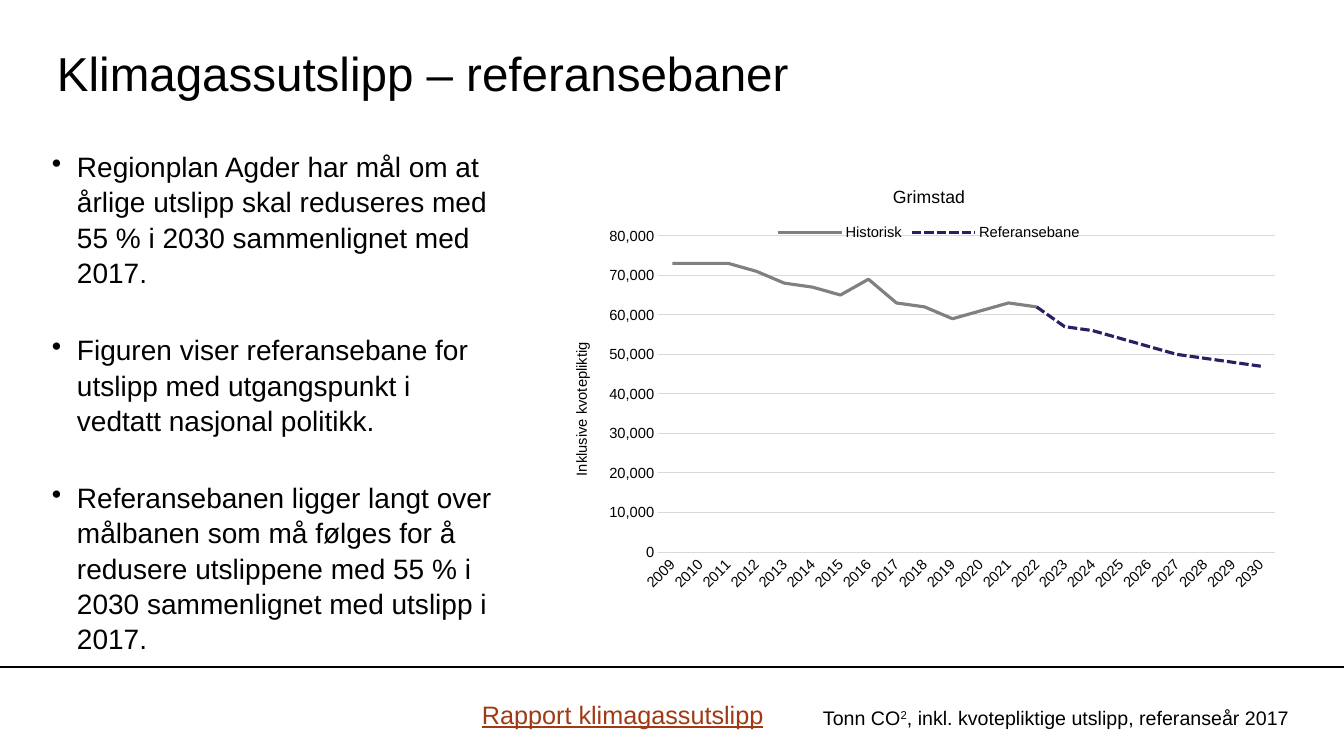
import pptx
import pptx.chart.data
import pptx.dml.color
import pptx.enum.chart
import pptx.enum.dml
import pptx.enum.shapes
import pptx.enum.text
import pptx.oxml
import pptx.oxml.ns
import pptx.util

WIDTH, HEIGHT = 1344, 756
EMU_PER_PX = 914400 / 100.8
BLACK = pptx.dml.color.RGBColor(0x00, 0x00, 0x00)
RUST = pptx.dml.color.RGBColor(0x9F, 0x3A, 0x14)
GREY = pptx.dml.color.RGBColor(0x80, 0x80, 0x80)
NAVY = pptx.dml.color.RGBColor(0x27, 0x21, 0x64)
GRID = pptx.dml.color.RGBColor(0xD9, 0xD9, 0xD9)

BULLETS = [
    "Regionplan Agder har mål om at årlige utslipp skal reduseres med  55 % i 2030 sammenlignet med 2017.",
    "Figuren viser referansebane for utslipp med utgangspunkt i vedtatt nasjonal politikk.",
    "Referansebanen ligger langt over målbanen som må følges for å redusere utslippene med 55 % i 2030 "
    "sammenlignet med utslipp i 2017.",
]
YEARS = range(2009, 2031)
HISTORIC = [73000, 73000, 73000, 71000, 68000, 67000, 65000, 69000, 63000, 62000, 59000, 61000, 63000, 62000]
REFERENCE = [62000, 57000, 56000, 54000, 52000, 50000, 49000, 48000, 47000]


def px(length):
    """Turn pixels into EMU."""
    return pptx.util.Emu(round(length * EMU_PER_PX))


def set_values(target, values):
    """Set each named attribute of the target."""
    for name, value in values.items():
        setattr(target, name, value)


def set_font(font, size, color=BLACK, **extra):
    """Give a font its face, size and colour."""
    set_values(font, {"name": "Arial", "size": pptx.util.Pt(size), "bold": False, **extra})
    font.color.rgb = color


def add_text_frame(slide, box, margins=(10, 5), anchor=pptx.enum.text.MSO_ANCHOR.TOP):
    """Add a wrapping text box and return its frame."""
    frame = slide.shapes.add_textbox(*map(px, box)).text_frame
    side, end = map(px, margins)
    set_values(frame, {
        "word_wrap": True, "vertical_anchor": anchor,
        "margin_left": side, "margin_right": side, "margin_top": end, "margin_bottom": end,
    })
    return frame


def add_run(paragraph, text, size, color=BLACK, **extra):
    """Add a formatted run to a paragraph."""
    run = paragraph.add_run()
    run.text = text
    set_font(run.font, size, color, **extra)
    return run


def add_title(slide, box):
    """Place the slide title."""
    frame = add_text_frame(slide, box, (0, 0), pptx.enum.text.MSO_ANCHOR.MIDDLE)
    add_run(frame.paragraphs[0], "Klimagassutslipp – referansebaner", 34)


def add_bullets(slide, box):
    """Place the bulleted statements."""
    frame = add_text_frame(slide, box, (0, 0))
    for index, text in enumerate(BULLETS):
        paragraph = frame.add_paragraph() if index else frame.paragraphs[0]
        properties = paragraph._p.get_or_add_pPr()
        set_values(properties, {"marL": px(25), "indent": px(-25)})
        properties.set("marL", str(px(25)))
        properties.set("indent", str(px(-25)))
        bullet = pptx.oxml.parse_xml(f'<a:buChar {pptx.oxml.ns.nsdecls("a")} char="•"/>')
        properties.append(bullet)
        set_values(paragraph, {"line_spacing": 1.05, "space_before": pptx.util.Pt(30 if index else 0)})
        add_run(paragraph, text, 20)


def format_axes(chart):
    """Style both axes of the chart."""
    category_axis, value_axis = chart.category_axis, chart.value_axis
    for axis in (category_axis, value_axis):
        axis.major_tick_mark = axis.minor_tick_mark = pptx.enum.chart.XL_TICK_MARK.NONE
        set_font(axis.tick_labels.font, 10.5)
    set_values(value_axis, {"minimum_scale": 0, "maximum_scale": 80000, "major_unit": 10000})
    set_values(value_axis.tick_labels, {"number_format": "#,##0", "number_format_is_linked": False})
    value_axis.format.line.fill.background()
    for line in (category_axis.format.line, value_axis.major_gridlines.format.line):
        line.color.rgb = GRID
        line.width = pptx.util.Pt(0.75)
    category_axis._element.txPr.find(pptx.oxml.ns.qn("a:bodyPr")).set("rot", "-2700000")
    add_run(value_axis.axis_title.text_frame.paragraphs[0], "Inklusive kvotepliktig", 10.5)


def set_plot_layout(chart, x, y, w, h):
    """Fix the inner plot area as fractions of the chart."""
    plot_area = chart._chartSpace.chart.plotArea
    for layout in plot_area.findall(pptx.oxml.ns.qn("c:layout")):
        plot_area.remove(layout)
    lengths = "".join(f'<c:{name} val="{value}"/>' for name, value in zip("xywh", (x, y, w, h)))
    plot_area.insert(0, pptx.oxml.parse_xml(
        f'<c:layout {pptx.oxml.ns.nsdecls("c")}><c:manualLayout><c:layoutTarget val="inner"/>'
        f'<c:xMode val="edge"/><c:yMode val="edge"/>{lengths}</c:manualLayout></c:layout>'))


def add_emission_chart(slide, box):
    """Place the line chart of emissions."""
    data = pptx.chart.data.CategoryChartData(number_format="#,##0")
    data.categories = [str(year) for year in YEARS]
    data.add_series("Historisk", HISTORIC + [None] * (len(YEARS) - len(HISTORIC)))
    data.add_series("Referansebane", [None] * (len(YEARS) - len(REFERENCE)) + REFERENCE)
    chart = slide.shapes.add_chart(pptx.enum.chart.XL_CHART_TYPE.LINE, *map(px, box), data).chart
    set_font(chart.font, 10.5)
    add_run(chart.chart_title.text_frame.paragraphs[0], "Grimstad", 12.6)
    chart.has_legend = True
    set_values(chart.legend, {"position": pptx.enum.chart.XL_LEGEND_POSITION.TOP, "include_in_layout": False})
    set_font(chart.legend.font, 10.5)
    chart.plots[0].vary_by_categories = False
    dashes = (pptx.enum.dml.MSO_LINE.SOLID, pptx.enum.dml.MSO_LINE.SQUARE_DOT)
    for series, color, dash in zip(chart.series, (GREY, NAVY), dashes):
        series.smooth = False
        series.marker.style = pptx.enum.chart.XL_MARKER_STYLE.NONE
        series.format.line.color.rgb = color
        set_values(series.format.line, {"width": pptx.util.Pt(2.25), "dash_style": dash})
    format_axes(chart)
    set_plot_layout(chart, 0.14, 0.15, 0.82, 0.7)


def add_footer(slide, box):
    """Place the rule, the report name and the unit note."""
    left, top, width, _ = box
    rule = slide.shapes.add_connector(
        pptx.enum.shapes.MSO_CONNECTOR.STRAIGHT, *map(px, (left, top, left + width, top)))
    rule.line.color.rgb = BLACK
    rule.line.width = pptx.util.Pt(0.75)
    rule._element.spPr.append(pptx.oxml.parse_xml(f'<a:effectLst {pptx.oxml.ns.nsdecls("a")}/>'))
    report = add_text_frame(slide, (left + 472, top + 27, 319, 40)).paragraphs[0]
    add_run(report, "Rapport klimagassutslipp", 18, RUST, underline=True)
    note = add_text_frame(slide, (left + 813, top + 34, 513, 34)).paragraphs[0]
    add_run(note, "Tonn CO", 14)
    add_run(note, "2", 14)._r.get_or_add_rPr().set("baseline", "30000")
    add_run(note, ", inkl. kvotepliktige utslipp, referanseår 2017", 14)


def main():
    """Build and save the slide."""
    presentation = pptx.Presentation()
    set_values(presentation, {"slide_width": px(WIDTH), "slide_height": px(HEIGHT)})
    slide = presentation.slides.add_slide(presentation.slide_layouts[6])
    add_footer(slide, (0, 667, WIDTH, 89))
    add_title(slide, (57, 34, 1119, 76))
    add_bullets(slide, (52, 148, 443, 496))
    add_emission_chart(slide, (553, 168, 752, 452))
    presentation.save("out.pptx")


if __name__ == "__main__":
    main()
